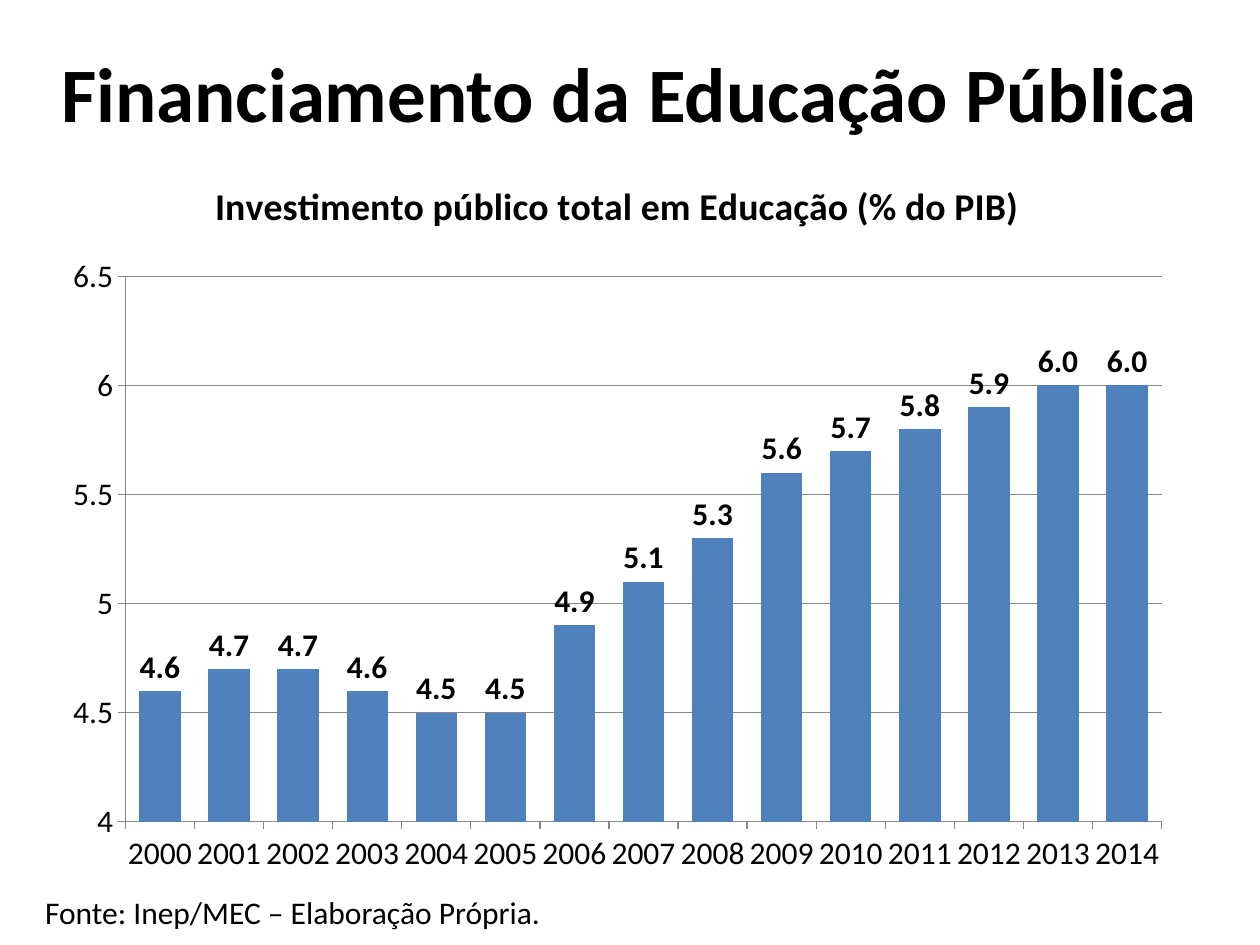
from pptx import Presentation
from pptx.chart.data import CategoryChartData
from pptx.dml.color import RGBColor
from pptx.enum.chart import XL_CHART_TYPE, XL_LABEL_POSITION, XL_TICK_MARK
from pptx.enum.text import MSO_ANCHOR, PP_ALIGN
from pptx.util import Inches, Pt

COLUMNS = XL_CHART_TYPE.COLUMN_CLUSTERED
OUTSIDE_END = XL_LABEL_POSITION.OUTSIDE_END
TICK_OUTSIDE = XL_TICK_MARK.OUTSIDE
MIDDLE = MSO_ANCHOR.MIDDLE
LEFT, CENTER = PP_ALIGN.LEFT, PP_ALIGN.CENTER

FONT = "Calibri"
BLACK = RGBColor(0x00, 0x00, 0x00)
BLUE = RGBColor(0x4F, 0x81, 0xBD)
GRAY = RGBColor(0x87, 0x87, 0x87)


def write_text(tf, text, size=18, bold=False, align=LEFT):
    p = tf.paragraphs[0]
    p.alignment = align
    r = p.add_run()
    r.text = text
    r.font.name = FONT
    r.font.size = Pt(size)
    r.font.bold = bold
    r.font.color.rgb = BLACK


prs = Presentation()
prs.slide_width, prs.slide_height = Inches(10), Inches(7.5)
s = prs.slides.add_slide(prs.slide_layouts[5])

# Title
title = s.shapes.title
title.left, title.top = Inches(0), Inches(0)
title.width, title.height = Inches(10), Inches(1.45)
title.text_frame.vertical_anchor = MIDDLE
write_text(title.text_frame, "Financiamento da Educação Pública",
           size=44, bold=True, align=CENTER)

# Investment by year, % of GDP
data = CategoryChartData(number_format="#,##0.0")
data.categories = [str(year) for year in range(2000, 2015)]
data.add_series("Investimento", [4.6, 4.7, 4.7, 4.6, 4.5, 4.5, 4.9, 5.1,
                                 5.3, 5.6, 5.7, 5.8, 5.9, 6.0, 6.0])
chart = s.shapes.add_chart(COLUMNS, Inches(0.4), Inches(1.2),
                           Inches(9), Inches(5.84), data).chart
chart.has_legend = False
chart.font.name = FONT
chart.font.size = Pt(18)
chart.font.color.rgb = BLACK
chart.has_title = True
chart.chart_title.include_in_layout = False
write_text(chart.chart_title.text_frame,
           "Investimento público total em Educação (% do PIB)",
           size=21.6, bold=True, align=CENTER)

# Columns and their labels
plot = chart.plots[0]
plot.gap_width = 67
plot.vary_by_categories = False
fill = plot.series[0].format.fill
fill.solid()
fill.fore_color.rgb = BLUE
plot.has_data_labels = True
labels = plot.data_labels
labels.show_value = True
labels.number_format = "#,##0.0"
labels.number_format_is_linked = False
labels.position = OUTSIDE_END
labels.font.name = FONT
labels.font.size = Pt(18)
labels.font.bold = True
labels.font.color.rgb = BLACK

# Axes and gridlines
values = chart.value_axis
values.minimum_scale, values.maximum_scale = 4, 6.5
values.major_unit = 0.5
values.has_major_gridlines = True
values.tick_labels.number_format = "General"
values.tick_labels.number_format_is_linked = False
for axis in (values, chart.category_axis):
    axis.major_tick_mark = TICK_OUTSIDE
for part in (values, chart.category_axis, values.major_gridlines):
    part.format.line.color.rgb = GRAY
    part.format.line.width = Pt(0.75)

# Source note
note = s.shapes.add_textbox(Inches(0.26), Inches(7.04), Inches(6.47), Inches(0.4))
note.text_frame.word_wrap = True
write_text(note.text_frame, "Fonte: Inep/MEC – Elaboração Própria.")

prs.save("out.pptx")
